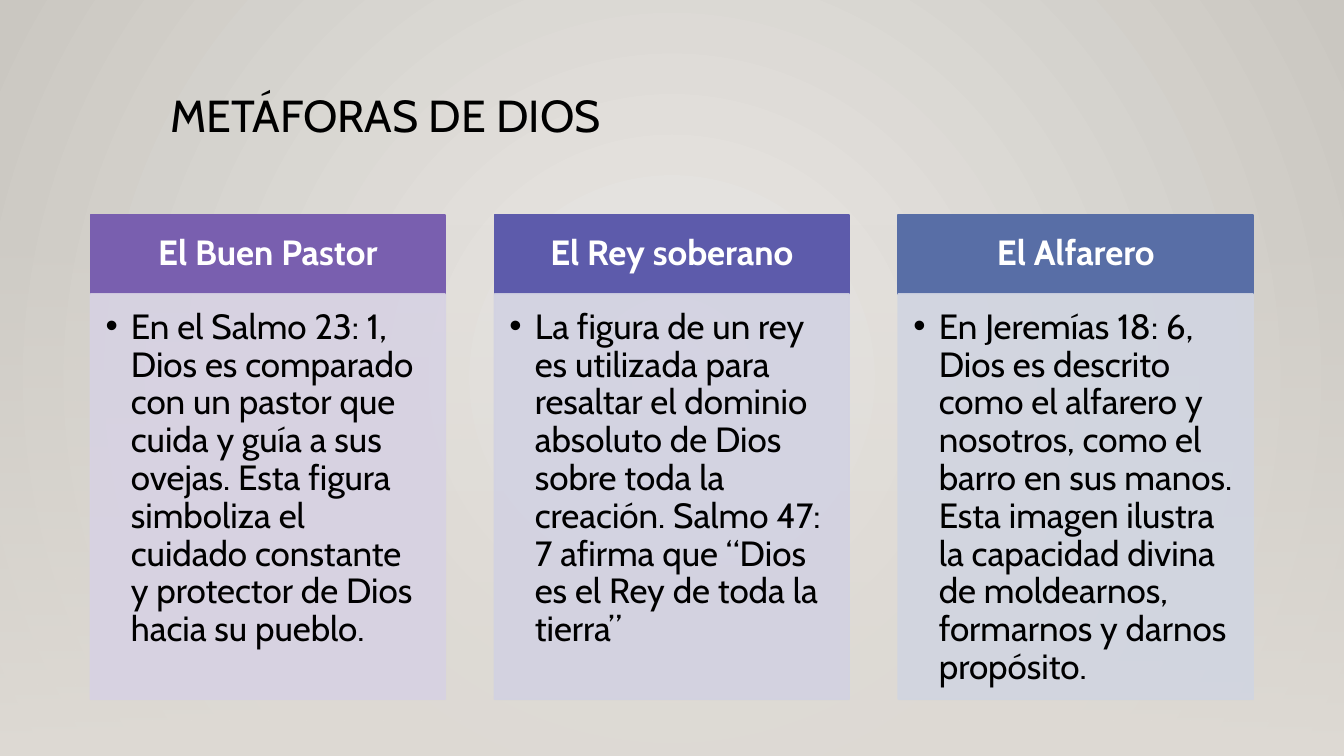
from lxml import etree
from pptx import Presentation
from pptx.dml.color import RGBColor
from pptx.enum import shapes, text
from pptx.oxml import parse_xml
from pptx.oxml.ns import nsdecls, qn
from pptx.util import Cm, Pt

BLACK = RGBColor(0x00, 0x00, 0x00)
WHITE = RGBColor(0xFF, 0xFF, 0xFF)
CARDS = [
    ("El Buen Pastor", RGBColor(0x79, 0x5F, 0xAF), RGBColor(0xD7, 0xD2, 0xE3),
     "En el Salmo 23: 1, Dios es comparado con un pastor que cuida y guía a sus ovejas. "
     "Esta figura simboliza el cuidado constante y protector de Dios hacia su pueblo."),
    ("El Rey soberano", RGBColor(0x5D, 0x5B, 0xAB), RGBColor(0xD2, 0xD2, 0xE2),
     "La figura de un rey es utilizada para resaltar el dominio absoluto de Dios sobre "
     "toda la creación. Salmo 47: 7 afirma que “Dios es el Rey de toda la tierra”"),
    ("El Alfarero", RGBColor(0x58, 0x6E, 0xA6), RGBColor(0xD1, 0xD5, 0xE1),
     "En Jeremías 18: 6, Dios es descrito como el alfarero y nosotros, como el barro en "
     "sus manos. Esta imagen ilustra la capacidad divina de moldearnos, formarnos y "
     "darnos propósito."),
]


def blend(root, first, last, kind):
    old = root.find(".//" + qn("a:gradFill"))
    new = parse_xml(
        f'<a:gradFill {nsdecls("a")} rotWithShape="1"><a:gsLst>'
        f'<a:gs pos="0">{first}</a:gs><a:gs pos="100000">{last}</a:gs>'
        f'</a:gsLst>{kind}</a:gradFill>')
    old.getparent().replace(old, new)


def write(frame, words, size, color, pads, bold=False):
    frame.word_wrap = True
    (frame.margin_left, frame.margin_top,
     frame.margin_right, frame.margin_bottom) = [Cm(pad) for pad in pads]
    para = frame.paragraphs[0]
    para.line_spacing = 0.9
    run = para.add_run()
    run.text = words
    run.font.name = "Cabin"
    run.font.size = Pt(size)
    run.font.bold = bold
    run.font.color.rgb = color
    return para


deck = Presentation()
deck.slide_width = Cm(33.87)
deck.slide_height = Cm(19.05)
slide = deck.slides.add_slide(deck.slide_layouts[6])

slide.background.fill.gradient()
blend(slide.element, '<a:srgbClr val="ECEAE7"/>', '<a:srgbClr val="CAC7C1"/>',
      '<a:path path="circle"><a:fillToRect l="50000" t="50000" r="50000" b="50000"/></a:path>')

haze = slide.shapes.add_shape(shapes.MSO_SHAPE.RECTANGLE, 0, Cm(5.61), Cm(33.87), Cm(13.44))
haze.shadow.inherit = False
haze.line.fill.background()
haze.fill.gradient()
blend(haze.element, '<a:srgbClr val="DFDBD5"><a:alpha val="0"/></a:srgbClr>',
      '<a:srgbClr val="DFDBD5"/>', '<a:lin ang="5400000" scaled="0"/>')

title = slide.shapes.add_textbox(Cm(4.04), Cm(2.24), Cm(26.67), Cm(2.92))
write(title.text_frame, "METÁFORAS DE DIOS", 32, BLACK, (0.25, 0.13, 0.25, 0.13))

for i, (name, dark, pale, words) in enumerate(CARDS):
    left = Cm(2.28 + 10.18 * i)
    head = slide.shapes.add_shape(shapes.MSO_SHAPE.RECTANGLE, left, Cm(5.41), Cm(8.94), Cm(2))
    body = slide.shapes.add_shape(shapes.MSO_SHAPE.RECTANGLE, left, Cm(7.41), Cm(8.94), Cm(10.21))
    for box, color in ((head, dark), (body, pale)):
        box.shadow.inherit = False
        box.fill.solid()
        box.fill.fore_color.rgb = color
        box.line.color.rgb = color
        box.line.width = Pt(1.25)
    for tint in body.element.spPr.iter(qn("a:srgbClr")):
        etree.SubElement(tint, qn("a:alpha")).set("val", "90000")

    head.text_frame.vertical_anchor = text.MSO_ANCHOR.MIDDLE
    para = write(head.text_frame, name, 25, WHITE, (0.48, 0.28, 0.48, 0.28), True)
    para.alignment = text.PP_ALIGN.CENTER

    body.text_frame.vertical_anchor = text.MSO_ANCHOR.TOP
    para = write(body.text_frame, words, 25, BLACK, (0.38, 0.38, 0.48, 0.56))
    para.alignment = text.PP_ALIGN.LEFT
    props = para._p.get_or_add_pPr()
    props.set("marL", str(Cm(0.64)))
    props.set("indent", str(-Cm(0.64)))
    etree.SubElement(props, qn("a:buFont")).set("typeface", "Arial")
    etree.SubElement(props, qn("a:buChar")).set("char", "•")

deck.save("out.pptx")
